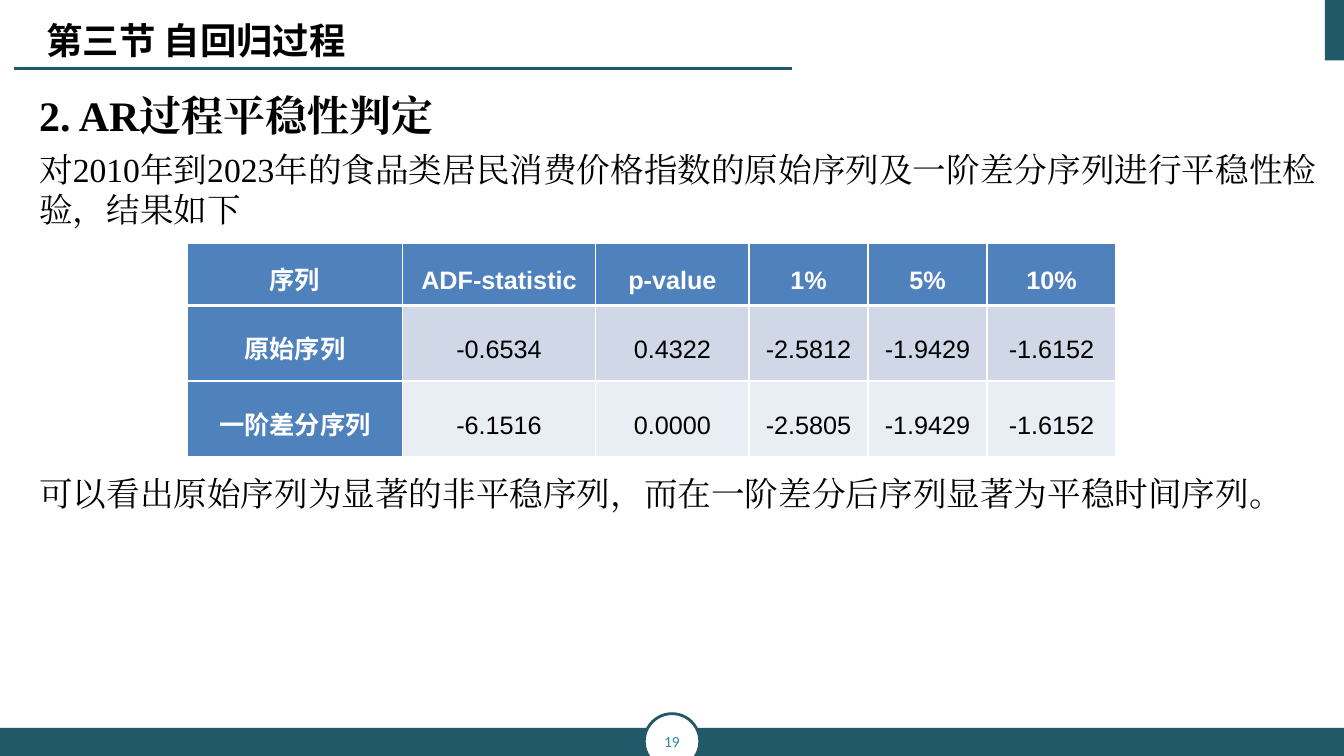
from lxml import etree
from pptx import Presentation
from pptx import util as u
from pptx.dml.color import RGBColor
from pptx.enum import shapes, text
from pptx.oxml.ns import qn

THEME = dict(
    teal="215968", number="31859C", white="FFFFFF", black="000000",
    header="4F81BD", bands=("D0D8E8", "E9EDF4"),
    serif="Times New Roman", sans="Arial", heading="Noto Sans CJK SC", small="Calibri",
    section_size=26, topic_size=30, body_size=24, table_size=18, number_size=11,
)
WIDTH, HEIGHT = 13.33, 7.5


def rgb(name):
    return RGBColor.from_string(THEME.get(name, name))


def write(paragraph, words, font, size, color="black", bold=False):
    """Add one run, with the same typeface for Latin and East Asian letters."""
    run = paragraph.add_run()
    run.text = words
    run.font.name = THEME[font]
    run.font.size = u.Pt(THEME[size])
    run.font.bold = bold
    run.font.color.rgb = rgb(color)
    east_asian = etree.Element(qn("a:ea"), typeface=THEME[font])
    run.font._element.find(qn("a:latin")).addnext(east_asian)


deck = Presentation()
deck.slide_width, deck.slide_height = u.Inches(WIDTH), u.Inches(HEIGHT)
slide = deck.slides.add_slide(deck.slide_layouts[6])

# Frame: corner block, footer band, page number badge, rule under the section name
kinds = shapes.MSO_SHAPE
for kind, box, fill in (
    (kinds.RECTANGLE, (WIDTH - 0.19, 0, 0.19, 0.6), "teal"),
    (kinds.RECTANGLE, (0, HEIGHT - 0.28, WIDTH, 0.28), "teal"),
    (kinds.OVAL, (WIDTH / 2 - 0.275, 7.08, 0.55, 0.55), "white"),
):
    badge = slide.shapes.add_shape(kind, *map(u.Inches, box))
    badge.shadow.inherit = False
    badge.fill.solid()
    badge.fill.fore_color.rgb = rgb(fill)
    badge.line.fill.background()
badge.line.color.rgb = rgb("teal")
badge.line.width = u.Pt(2)
page = badge.text_frame
page.margin_left = page.margin_right = 0
page.vertical_anchor = text.MSO_ANCHOR.MIDDLE
page.paragraphs[0].alignment = text.PP_ALIGN.CENTER
write(page.paragraphs[0], "19", "small", "number_size", "number")

rule = slide.shapes.add_connector(
    shapes.MSO_CONNECTOR.STRAIGHT, *map(u.Inches, (7.86, 0.68, 0.14, 0.68)))
rule.line.color.rgb = rgb("teal")
rule.line.width = u.Pt(1.5)
etree.SubElement(rule._element.spPr, qn("a:effectLst"))

# Body text, with room for the table before the conclusion
body = slide.shapes.add_textbox(*map(u.Inches, (0.29, 0.84, 12.91, 6.14))).text_frame
body.word_wrap = True
topic, finding, conclusion = body.paragraphs[0], body.add_paragraph(), body.add_paragraph()
write(topic, "2. AR过程平稳性判定", "serif", "topic_size", bold=True)
finding.space_before = u.Pt(6)
write(finding, "对2010年到2023年的食品类居民消费价格指数的原始序列及一阶差分序列进行平稳性检验，结果如下",
      "serif", "body_size")
conclusion.space_before = u.Pt(174)
write(conclusion, "可以看出原始序列为显著的非平稳序列，而在一阶差分后序列显著为平稳时间序列。",
      "serif", "body_size")

section = slide.shapes.add_textbox(*map(u.Inches, (0.36, 0.13, 4.57, 0.54))).text_frame
section.word_wrap = True
section.vertical_anchor = text.MSO_ANCHOR.MIDDLE
write(section.paragraphs[0], "第三节 自回归过程", "heading", "section_size", bold=True)

# Unit root test results
results = (
    ("序列", "ADF-statistic", "p-value", "1%", "5%", "10%"),
    ("原始序列", "-0.6534", "0.4322", "-2.5812", "-1.9429", "-1.6152"),
    ("一阶差分序列", "-6.1516", "0.0000", "-2.5805", "-1.9429", "-1.6152"),
)
columns, rows = (2.13, 1.92, 1.52, 1.18, 1.18, 1.28), (0.62, 0.75, 0.75)
tests = slide.shapes.add_table(
    len(rows), len(columns), *map(u.Inches, (1.86, 2.41, sum(columns), sum(rows)))).table
for column, width in zip(tests.columns, columns):
    column.width = u.Inches(width)
for r, (row, height) in enumerate(zip(tests.rows, rows)):
    row.height = u.Inches(height)
    for c, (cell, words) in enumerate(zip(row.cells, results[r])):
        is_header = r == 0 or c == 0
        cell.margin_left = cell.margin_right = u.Inches(0.07)
        cell.margin_top = cell.margin_bottom = 0
        cell.vertical_anchor = text.MSO_ANCHOR.MIDDLE
        entry = cell.text_frame.paragraphs[0]
        entry.alignment = text.PP_ALIGN.CENTER
        entry.line_spacing = 1.5
        write(entry, words, "sans", "table_size", "white" if is_header else "black", is_header)
        properties = cell._tc.get_or_add_tcPr()
        for side in "LRTB":
            heavy = (r, side) in ((0, "B"), (1, "T"))
            border = etree.SubElement(properties, qn(f"a:ln{side}"), w=str(u.Pt(3 if heavy else 1)))
            paint = etree.SubElement(border, qn("a:solidFill"))
            etree.SubElement(paint, qn("a:srgbClr"), val=THEME["white"])
        cell.fill.solid()
        cell.fill.fore_color.rgb = rgb("header" if is_header else THEME["bands"][r - 1])

deck.save("out.pptx")
